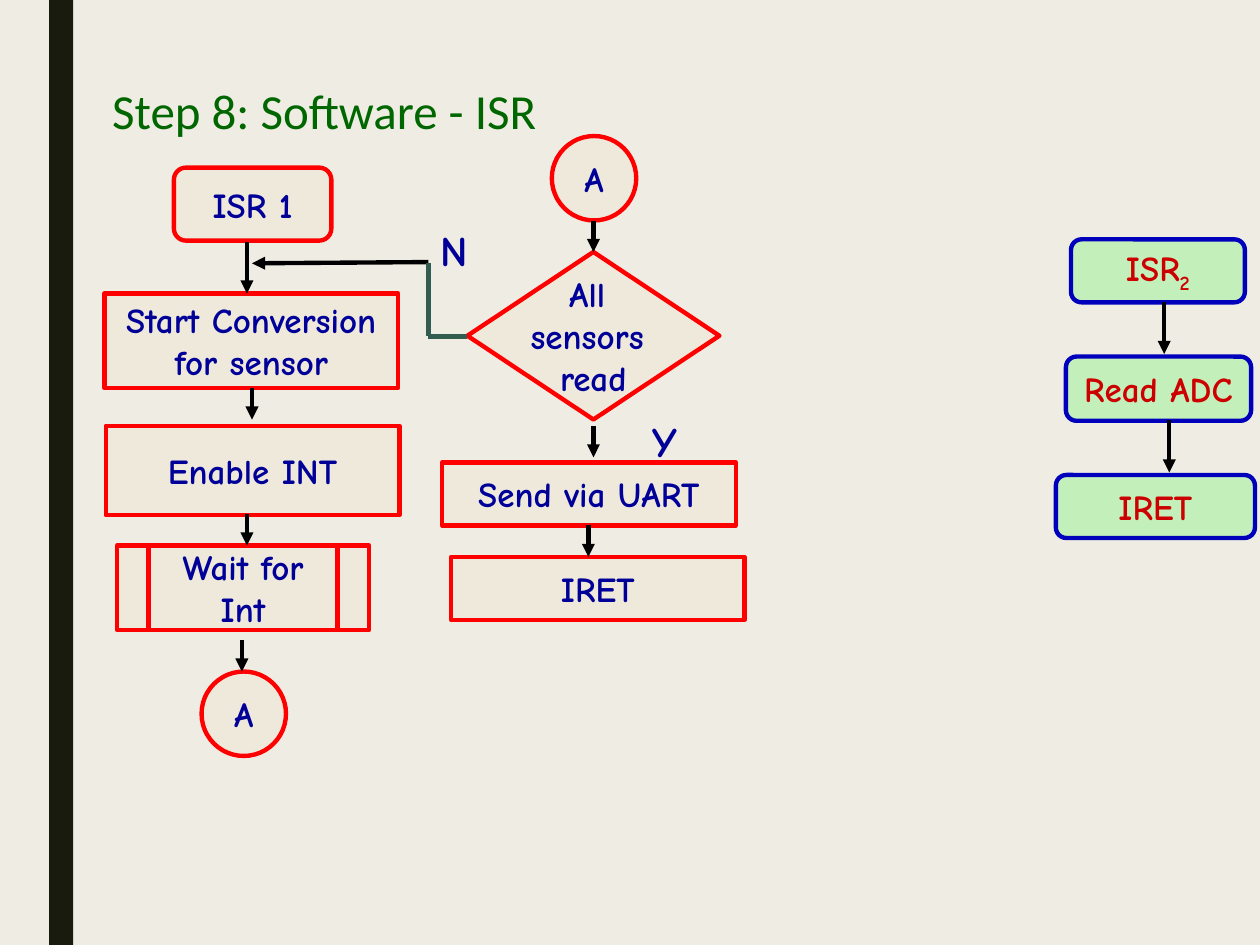
from dataclasses import dataclass

from pptx import Presentation
from pptx.dml.color import RGBColor
from pptx.enum import shapes, text
from pptx.oxml.ns import qn
from pptx.util import Inches, Pt
from lxml import etree

PAPER = RGBColor(0xEF, 0xED, 0xE3)
BAR = RGBColor(0x19, 0x1B, 0x0E)
GREEN = RGBColor(0x00, 0x66, 0x00)
NAVY = RGBColor(0x00, 0x00, 0x99)
BLACK = RGBColor(0, 0, 0)
TEAL = RGBColor(0x31, 0x5C, 0x4F)
FLOW_FONT = "Comic Neue"
KIND = shapes.MSO_SHAPE


@dataclass(frozen=True)
class Style:
    fill: RGBColor
    opacity: int
    outline: RGBColor
    ink: RGBColor


MAIN = Style(RGBColor(0xE8, 0xA8, 0x44), 5, RGBColor(0xFF, 0, 0), NAVY)
SECOND = Style(RGBColor(0, 0xFF, 0), 18, RGBColor(0, 0, 0xBC), RGBColor(0xCC, 0, 0))


@dataclass(frozen=True)
class Node:
    kind: shapes.MSO_SHAPE
    left: float
    top: float
    width: float
    height: float
    label: str
    style: Style = MAIN
    subscript: str = ""


@dataclass(frozen=True)
class Link:
    x1: float
    y1: float
    x2: float
    y2: float
    color: RGBColor = BLACK
    width: float = 2.5
    arrow: bool = True


def down(x: float, top: float, length: float = 0.25) -> Link:
    return Link(x, top, x, top + length)


NODES = [
    Node(KIND.FLOWCHART_ALTERNATE_PROCESS, 1.38, 1.33, 1.25, 0.58, "ISR 1"),
    Node(KIND.RECTANGLE, 0.83, 2.33, 2.33, 0.75, "Start Conversion\nfor sensor"),
    Node(KIND.RECTANGLE, 0.84, 3.38, 2.33, 0.71, "Enable INT"),
    Node(KIND.FLOWCHART_PREDEFINED_PROCESS, 0.93, 4.33, 2, 0.67, "Wait for\nInt"),
    Node(KIND.OVAL, 1.6, 5.33, 0.67, 0.67, "A"),
    Node(KIND.OVAL, 4.38, 1.08, 0.67, 0.67, "A"),
    Node(KIND.FLOWCHART_DECISION, 3.71, 2, 2, 1.33, "All \nsensors \nread"),
    Node(KIND.RECTANGLE, 3.51, 3.67, 2.33, 0.5, "Send via UART"),
    Node(KIND.RECTANGLE, 3.58, 4.42, 2.33, 0.5, "IRET"),
    Node(KIND.FLOWCHART_ALTERNATE_PROCESS, 8.5, 1.9, 1.38, 0.5, "ISR", SECOND, "2"),
    Node(KIND.FLOWCHART_ALTERNATE_PROCESS, 8.46, 2.83, 1.47, 0.51, "Read ADC", SECOND),
    Node(KIND.FLOWCHART_ALTERNATE_PROCESS, 8.38, 3.77, 1.58, 0.5, "IRET", SECOND),
]

LINKS = [
    down(1.96, 1.92, 0.41), down(2, 3.08), down(1.96, 4.08), down(1.92, 5.08),
    down(4.71, 1.75), down(4.71, 3.38), down(4.67, 4.17),
    down(9.24, 2.4, 0.41), down(9.28, 3.33, 0.42),
    Link(3.4, 2.08, 2, 2.09),
    Link(3.71, 2.67, 3.4, 2.67, TEAL, 3, False),
    Link(3.4, 2.09, 3.4, 2.67, TEAL, 3, False),
]

BRANCH_LABELS = [("Y", 5.08, 3.25), ("N", 3.4, 1.73)]


def format_font(font, color: RGBColor, **values) -> None:
    for name, value in values.items():
        setattr(font, name, value)
    font.color.rgb = color


def write_flow_text(frame, label: str, color: RGBColor, size: float) -> None:
    frame.text = label
    for paragraph in frame.paragraphs:
        for run in paragraph.runs:
            format_font(run.font, color, name=FLOW_FONT, size=Pt(size), bold=True)


def add_node(slide, node: Node) -> None:
    box = map(Inches, (node.left, node.top, node.width, node.height))
    shape = slide.shapes.add_shape(node.kind, *box)
    shape.shadow.inherit = False
    shape.fill.solid()
    shape.fill.fore_color.rgb = node.style.fill
    color = shape.fill._xPr.find(qn("a:solidFill"))[0]
    etree.SubElement(color, qn("a:alpha"), val=str(node.style.opacity * 1000))
    shape.line.color.rgb = node.style.outline
    shape.line.width = Pt(2.5)

    frame = shape.text_frame
    frame.word_wrap = False
    frame.vertical_anchor = text.MSO_ANCHOR.MIDDLE
    write_flow_text(frame, node.label, node.style.ink, 20)
    for paragraph in frame.paragraphs:
        paragraph.alignment = text.PP_ALIGN.CENTER
    if node.subscript:
        run = frame.paragraphs[0].add_run()
        run.text = node.subscript
        format_font(run.font, node.style.ink, name=FLOW_FONT, size=Pt(20), bold=True)
        run.font._element.set("baseline", "-25000")


def add_link(slide, link: Link) -> None:
    ends = map(Inches, (link.x1, link.y1, link.x2, link.y2))
    connector = slide.shapes.add_connector(shapes.MSO_CONNECTOR.STRAIGHT, *ends)
    connector.line.color.rgb = link.color
    connector.line.width = Pt(link.width)
    properties = connector._element.spPr
    if link.arrow:
        etree.SubElement(properties.find(qn("a:ln")), qn("a:tailEnd"), type="triangle")
    etree.SubElement(properties, qn("a:effectLst"))


def add_branch_label(slide, label: str, left: float, top: float) -> None:
    box = slide.shapes.add_textbox(Inches(left), Inches(top), Inches(0.83), Inches(0.5))
    box.text_frame.word_wrap = True
    write_flow_text(box.text_frame, label, NAVY, 24)


def add_title(slide) -> None:
    title = slide.shapes.title
    title.left, title.top, title.width, title.height = map(Inches, (0.79, 0.59, 9, 1.25))
    frame = title.text_frame
    frame.text = "Step 8: Software - ISR"
    frame.auto_size = text.MSO_AUTO_SIZE.NONE
    frame.vertical_anchor = text.MSO_ANCHOR.TOP
    paragraph = frame.paragraphs[0]
    paragraph.alignment = text.PP_ALIGN.LEFT
    format_font(paragraph.runs[0].font, GREEN, name="Calibri", size=Pt(28))


def add_side_bar(slide) -> None:
    bar = slide.shapes.add_shape(KIND.RECTANGLE, Inches(0.39), 0, Inches(0.19), Inches(7.5))
    bar.shadow.inherit = False
    bar.fill.solid()
    bar.fill.fore_color.rgb = BAR
    bar.line.fill.background()


def main() -> None:
    presentation = Presentation()
    presentation.slide_width, presentation.slide_height = Inches(10), Inches(7.5)
    slide = presentation.slides.add_slide(presentation.slide_layouts[5])
    slide.background.fill.solid()
    slide.background.fill.fore_color.rgb = PAPER
    add_side_bar(slide)
    add_title(slide)
    for node in NODES:
        add_node(slide, node)
    for link in LINKS:
        add_link(slide, link)
    for label, left, top in BRANCH_LABELS:
        add_branch_label(slide, label, left, top)
    presentation.save("out.pptx")


if __name__ == "__main__":
    main()
